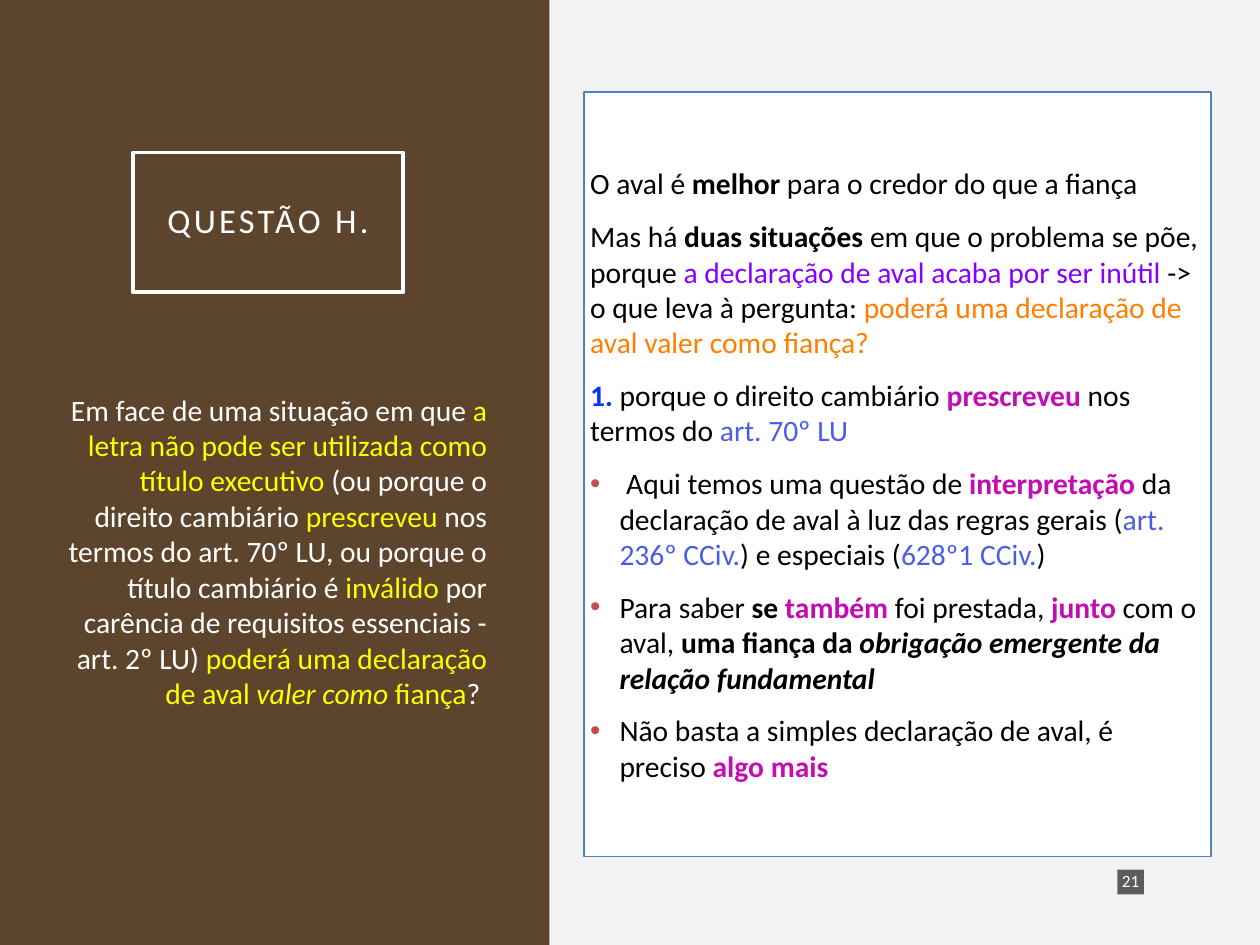
from dataclasses import dataclass

import pptx
import pptx.util
import pptx.dml.color
import pptx.enum.shapes
import pptx.enum.text
import pptx.oxml
import pptx.oxml.ns
from lxml import etree

Cm = pptx.util.Cm
Pt = pptx.util.Pt
Align = pptx.enum.text.PP_ALIGN
Anchor = pptx.enum.text.MSO_ANCHOR


@dataclass(frozen=True)
class Theme:
    font: str = "Calibri"
    title_size: int = 28
    text_size: int = 24
    number_size: int = 14
    brown: str = "5D442C"
    pale: str = "F2F2F2"
    white: str = "FFFFFF"
    black: str = "000000"
    frame: str = "4F81BD"
    badge: str = "1D1D1D"
    bullet: str = "C0504D"
    yellow: str = "FFFF00"
    violet: str = "8700FF"
    orange: str = "FF7E00"
    blue: str = "0433FF"
    magenta: str = "C40CB3"
    law: str = "4A5DE6"


THEME = Theme()

STYLES = {
    "white": {"color": THEME.white},
    "yellow": {"color": THEME.yellow},
    "yellow italic": {"color": THEME.yellow, "italic": True},
    "plain": {"color": THEME.black},
    "strong": {"color": THEME.black, "bold": True},
    "strong italic": {"color": THEME.black, "bold": True, "italic": True},
    "violet": {"color": THEME.violet},
    "orange": {"color": THEME.orange},
    "number": {"color": THEME.blue, "bold": True},
    "key": {"color": THEME.magenta, "bold": True},
    "law": {"color": THEME.law},
}

QUESTION = [
    ("Em face de uma situação em que ", "white"),
    ("a letra não pode ser utilizada como título executivo ", "yellow"),
    ("(ou porque o direito cambiário ", "white"),
    ("prescreveu", "yellow"),
    (" nos termos do art. 70º LU, ou porque o título cambiário é ", "white"),
    ("inválido", "yellow"),
    (" por carência de requisitos essenciais - art. 2º LU) ", "white"),
    ("poderá uma declaração de aval ", "yellow"),
    ("valer como", "yellow italic"),
    (" fiança", "yellow"),
    ("? ", "white"),
]

STATEMENTS = [
    [("O aval é ", "plain"), ("melhor", "strong"),
     (" para o credor do que a fiança", "plain")],
    [("Mas há ", "plain"), ("duas situações ", "strong"),
     ("em que o problema se põe, porque ", "plain"),
     ("a declaração de aval acaba por ser inútil ", "violet"),
     ("-> o que leva à pergunta: ", "plain"),
     ("poderá uma declaração de aval valer como fiança?", "orange")],
    [("1. ", "number"), ("porque o direito cambiário ", "plain"),
     ("prescreveu", "key"), (" nos termos do ", "plain"),
     ("art. 70º LU", "law")],
]

ARGUMENTS = [
    [(" Aqui temos uma questão de ", "plain"), ("interpretação", "key"),
     (" da declaração de aval à luz das regras gerais (", "plain"),
     ("art. 236º CCiv.", "law"), (") e especiais (", "plain"),
     ("628º1 CCiv.", "law"), (")", "plain")],
    [("Para saber ", "plain"), ("se ", "strong"), ("também", "key"),
     (" foi prestada, ", "plain"), ("junto", "key"),
     (" com o aval, ", "plain"), ("uma fiança da ", "strong"),
     ("obrigação emergente da relação fundamental", "strong italic")],
    [("Não basta a simples declaração de aval, é preciso ", "plain"),
     ("algo mais", "key")],
]


def rgb(color):
    return pptx.dml.color.RGBColor.from_string(color)


def apply_format(target, values):
    for name, value in values.items():
        setattr(target, name, value)


def inside(box, left, top, width, height):
    return box[0] + Cm(left), box[1] + Cm(top), Cm(width), Cm(height)


def add_panel(slide, box, fill=None, line=None, line_width=1):
    panel = slide.shapes.add_shape(
        pptx.enum.shapes.MSO_SHAPE.RECTANGLE, *box)
    panel.shadow.inherit = False
    if fill:
        panel.fill.solid()
        panel.fill.fore_color.rgb = rgb(fill)
    else:
        panel.fill.background()
    if line:
        panel.line.color.rgb = rgb(line)
        panel.line.width = Pt(line_width)
    else:
        panel.line.fill.background()
    return panel


def format_frame(frame, inset, anchor):
    margins = {f"margin_{side}": Cm(inset)
               for side in ("left", "top", "right", "bottom")}
    apply_format(frame, {"word_wrap": True, "vertical_anchor": anchor, **margins})


def write_runs(paragraph, pieces, size, **layout):
    apply_format(paragraph, layout)
    for text, style in pieces:
        run = paragraph.add_run()
        run.text = text
        values = {"name": THEME.font, "size": Pt(size), **STYLES[style]}
        color = values.pop("color")
        apply_format(run.font, values)
        run.font.color.rgb = rgb(color)


def add_bullet(paragraph):
    qn = pptx.oxml.ns.qn
    properties = paragraph._p.get_or_add_pPr()
    properties.set("marL", str(Cm(0.84)))
    properties.set("indent", str(-Cm(0.84)))
    bullet_color = etree.SubElement(properties, qn("a:buClr"))
    etree.SubElement(bullet_color, qn("a:srgbClr"), val=THEME.bullet)
    etree.SubElement(properties, qn("a:buFont"), typeface="Arial")
    etree.SubElement(properties, qn("a:buChar"), char="•")


def add_question_side(slide, box):
    title = add_panel(slide, inside(box, 3.81, 4.37, 7.75, 4.01),
                      line=THEME.white, line_width=3).text_frame
    format_frame(title, 0.71, Anchor.MIDDLE)
    heading = title.paragraphs[0]
    write_runs(heading, [("QUESTÃO H.", "white")], THEME.title_size,
               alignment=Align.CENTER, line_spacing=0.9)
    heading.runs[0].font._element.set("spc", "270")

    question = slide.shapes.add_textbox(
        *inside(box, 1.52, 11.05, 12.62, 9.25)).text_frame
    format_frame(question, 0.18, Anchor.TOP)
    question.auto_size = pptx.enum.text.MSO_AUTO_SIZE.SHAPE_TO_FIT_TEXT
    write_runs(question.paragraphs[0], QUESTION, THEME.text_size,
               alignment=Align.RIGHT)


def add_answer_side(slide, box):
    add_panel(slide, box, THEME.pale)
    answer = add_panel(slide, inside(box, 0.99, 2.64, 17.98, 21.92),
                       THEME.white, THEME.frame).text_frame
    format_frame(answer, 0.18, Anchor.MIDDLE)
    for index, pieces in enumerate(STATEMENTS + ARGUMENTS):
        paragraph = answer.add_paragraph() if index else answer.paragraphs[0]
        if index >= len(STATEMENTS):
            add_bullet(paragraph)
        write_runs(paragraph, pieces, THEME.text_size, alignment=Align.LEFT,
                   space_before=Pt(14 if index else 0))


def add_page_number(slide, box, number):
    badge = add_panel(slide, box, THEME.badge)
    color = badge._element.spPr.find(".//" + pptx.oxml.ns.qn("a:srgbClr"))
    etree.SubElement(color, pptx.oxml.ns.qn("a:alpha"), val="70000")
    format_frame(badge.text_frame, 0.08, Anchor.MIDDLE)
    write_runs(badge.text_frame.paragraphs[0], [(number, "white")],
               THEME.number_size, alignment=Align.CENTER, line_spacing=0.9)


def main():
    deck = pptx.Presentation()
    apply_format(deck, {"slide_width": Cm(36.12), "slide_height": Cm(27.1)})
    slide = deck.slides.add_slide(deck.slide_layouts[6])
    slide.background.fill.solid()
    slide.background.fill.fore_color.rgb = rgb(THEME.brown)
    split = Cm(15.75)
    add_question_side(slide, (0, 0, split, deck.slide_height))
    answer_box = (split, 0, deck.slide_width - split, deck.slide_height)
    add_answer_side(slide, answer_box)
    add_page_number(slide, inside(answer_box, 16.28, 24.94, 0.76, 0.71), "21")
    deck.save("out.pptx")


if __name__ == "__main__":
    main()
